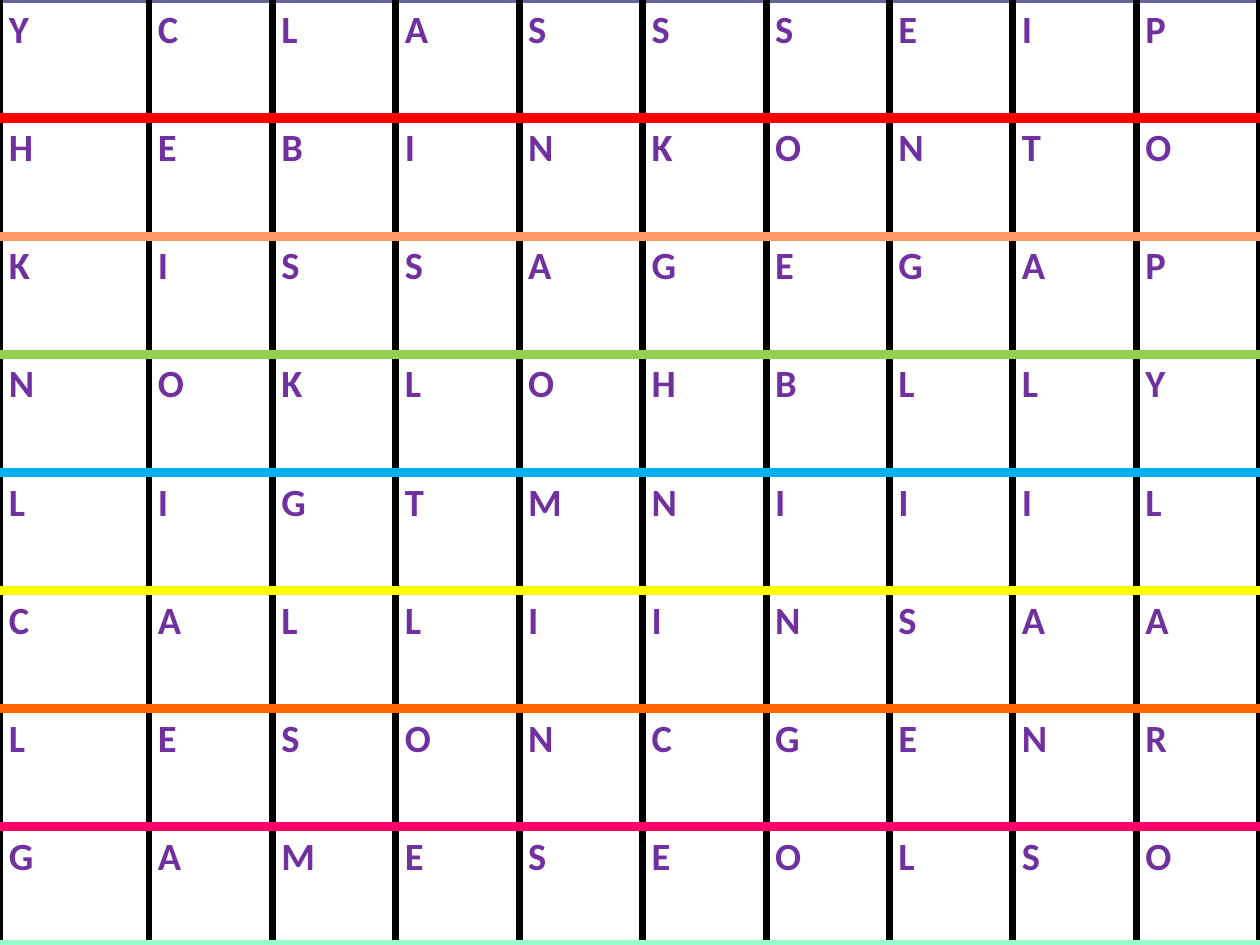
from lxml import etree
from pptx import Presentation
from pptx.dml.color import RGBColor
from pptx.oxml.ns import qn
from pptx.util import Pt

EMU_PER_INCH = 914400
PX_PER_INCH = 126
SLIDE_WIDTH, SLIDE_HEIGHT = 1260, 945
FIRST_COLUMN_WIDTH = 149
CELL_MARGIN = 9
SIDE_LINE, ROW_LINE = 4.5, 6

COLORS = {
    "letter": "7030A0",
    "black": "000000",
    "slate": "666699",
    "red": "FF0000",
    "salmon": "FF9966",
    "green": "92D050",
    "blue": "00B0F0",
    "yellow": "FFFF00",
    "orange": "FF6600",
    "pink": "FF0066",
    "mint": "99FFCC",
}

LETTER_ROWS = [
    "YCLASSSEIP",
    "HEBINKONTO",
    "KISSAGEGAP",
    "NOKLOHBLLY",
    "LIGTMNIIIL",
    "CALLIINSAA",
    "LESONCGENR",
    "GAMESEOLSO",
]

# Horizontal lines from the top edge of the grid to its bottom edge
ROW_LINES = [("slate", SIDE_LINE)] + [
    (name, ROW_LINE)
    for name in ("red", "salmon", "green", "blue", "yellow", "orange", "pink", "mint")
]


def px(length):
    return round(length * EMU_PER_INCH / PX_PER_INCH)


class SlideBuilder:
    def __init__(self, slide):
        self.slide = slide
        self.font_name = "Calibri"
        self.font_size = 22
        self.line_spacing = 1.15

    def border(self, cell, side, color, width):
        """Draw one side of a cell; sides must come in the order L, R, T, B."""
        properties = cell._tc.get_or_add_tcPr()
        line = etree.SubElement(properties, qn(f"a:ln{side}"), w=str(Pt(width)))
        fill = etree.SubElement(line, qn("a:solidFill"))
        etree.SubElement(fill, qn("a:srgbClr"), val=COLORS[color])

    def letter(self, cell, text):
        cell.margin_left = cell.margin_right = px(CELL_MARGIN)
        cell.margin_top = cell.margin_bottom = 0
        paragraph = cell.text_frame.paragraphs[0]
        paragraph.line_spacing = self.line_spacing
        run = paragraph.add_run()
        run.text = text
        run.font.name = self.font_name
        run.font.size = Pt(self.font_size)
        run.font.bold = True
        run.font.color.rgb = RGBColor.from_string(COLORS["letter"])

    def letter_grid(self, rows, row_lines):
        column_count = len(rows[0])
        table = self.slide.shapes.add_table(
            len(rows), column_count, 0, 0, px(SLIDE_WIDTH), px(SLIDE_HEIGHT)
        ).table
        table.first_row = table.horz_banding = False

        other_width = px(SLIDE_WIDTH - FIRST_COLUMN_WIDTH) // (column_count - 1)
        for column in table.columns:
            column.width = other_width
        table.columns[0].width = px(FIRST_COLUMN_WIDTH)
        for row in table.rows:
            row.height = px(SLIDE_HEIGHT) // len(rows)

        for row_index, letters in enumerate(rows):
            for column_index, text in enumerate(letters):
                cell = table.cell(row_index, column_index)
                self.letter(cell, text)
                self.border(cell, "L", "black", SIDE_LINE)
                self.border(cell, "R", "black", SIDE_LINE)
                self.border(cell, "T", *row_lines[row_index])
                self.border(cell, "B", *row_lines[row_index + 1])
                cell.fill.background()


def main():
    presentation = Presentation()
    presentation.slide_width = px(SLIDE_WIDTH)
    presentation.slide_height = px(SLIDE_HEIGHT)
    slide = presentation.slides.add_slide(presentation.slide_layouts[6])
    SlideBuilder(slide).letter_grid(LETTER_ROWS, ROW_LINES)
    presentation.save("out.pptx")


if __name__ == "__main__":
    main()
